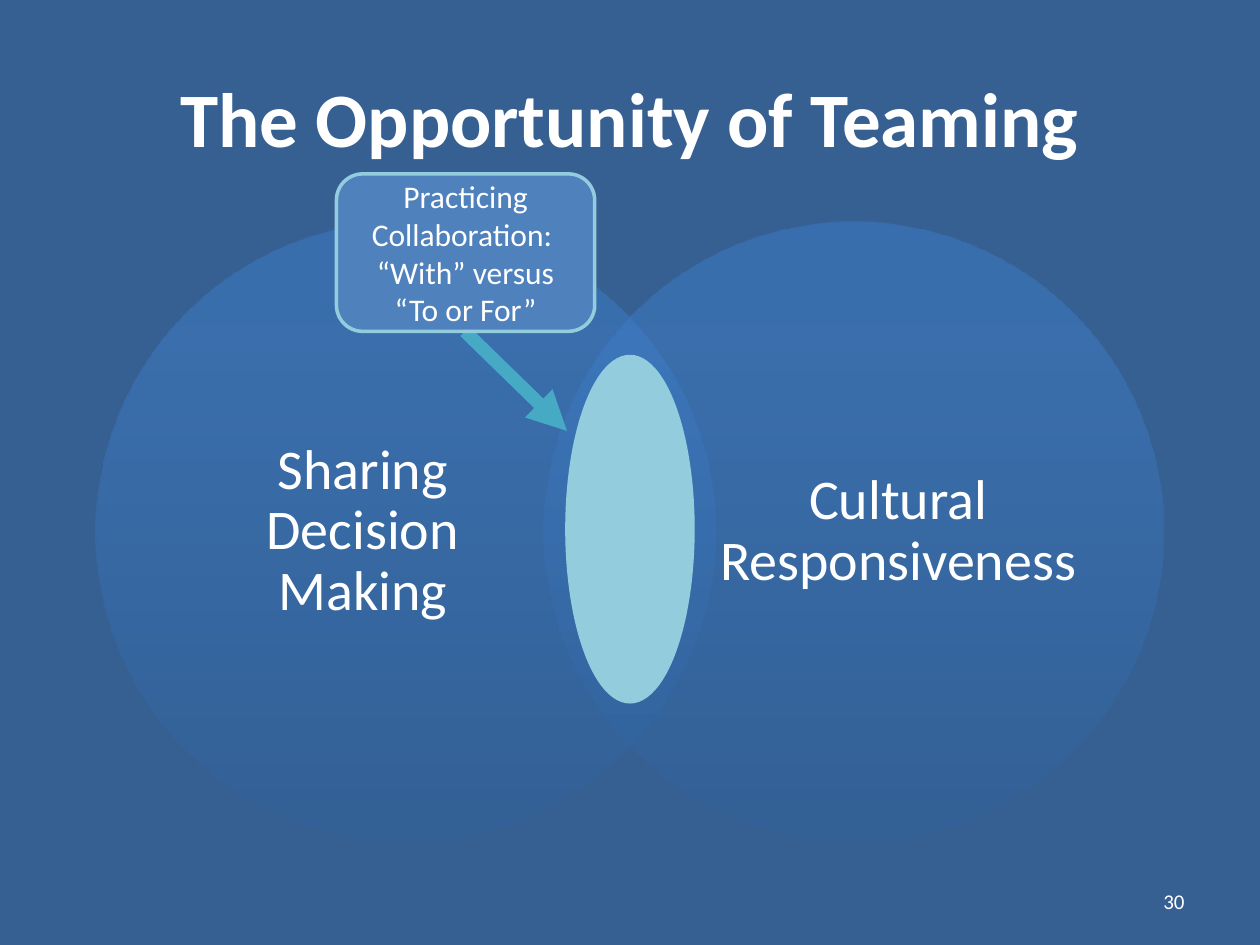
from lxml.etree import SubElement
from pptx import Presentation
from pptx.dml.color import RGBColor
from pptx.enum.shapes import MSO_CONNECTOR as CONNECTOR, MSO_SHAPE as SHAPE
from pptx.enum.text import MSO_ANCHOR as ANCHOR, PP_ALIGN as ALIGN
from pptx.oxml.ns import qn
from pptx.util import Inches, Pt

NAVY = RGBColor(0x37, 0x60, 0x92)
BLUE = RGBColor(0x4F, 0x81, 0xBD)
AQUA = RGBColor(0x93, 0xCD, 0xDD)
TEAL = RGBColor(0x46, 0xAA, 0xC5)
WHITE = RGBColor(0xFF, 0xFF, 0xFF)
CIRCLE_STOPS = (
    (0, RGBColor(0x2F, 0x5F, 0x99)),
    (80, RGBColor(0x3D, 0x7C, 0xC7)),
    (100, RGBColor(0x3A, 0x7C, 0xCB)),
)


class VennSlide:
    """Draws the parts of a Venn diagram slide in one shared style."""

    font = "Calibri"

    def __init__(self, deck):
        self.slide = deck.slides.add_slide(deck.slide_layouts[6])
        self.slide.background.fill.solid()
        self.slide.background.fill.fore_color.rgb = NAVY

    def letter(self, frame, wording, size, align=ALIGN.CENTER, bold=False):
        frame.word_wrap = True
        frame.vertical_anchor = ANCHOR.MIDDLE
        frame.text = wording
        for paragraph in frame.paragraphs:
            paragraph.alignment = align
            for run in paragraph.runs:
                run.font.name = self.font
                run.font.size = Pt(size)
                run.font.bold = bold
                run.font.color.rgb = WHITE

    def text(self, box, wording, size, **style):
        frame = self.slide.shapes.add_textbox(*map(Inches, box)).text_frame
        self.letter(frame, wording, size, **style)
        return frame

    def outline(self, kind, box):
        shape = self.slide.shapes.add_shape(kind, *map(Inches, box))
        shape.shadow.inherit = False
        return shape

    def solid(self, kind, box, fill):
        shape = self.outline(kind, box)
        shape.fill.solid()
        shape.fill.fore_color.rgb = fill
        shape.line.color.rgb = AQUA
        shape.line.width = Pt(2)
        return shape

    def circle(self, left, top, diameter):
        circle = self.outline(SHAPE.OVAL, (left, top, diameter, diameter))
        circle.line.fill.background()
        circle.fill.gradient()
        circle.fill.gradient_angle = 90
        stops = circle.element.spPr.find(".//" + qn("a:gsLst"))
        for stop in list(stops):
            stops.remove(stop)
        for percent, color in CIRCLE_STOPS:
            stop = SubElement(stops, qn("a:gs"), pos=str(percent * 1000))
            tint = SubElement(stop, qn("a:srgbClr"), val=str(color))
            SubElement(tint, qn("a:alpha"), val="50000")

    def circle_label(self, box, wording):
        frame = self.text(box, wording, 32)
        frame.margin_left = frame.margin_right = 0
        frame.margin_top = frame.margin_bottom = 0
        frame.paragraphs[0].line_spacing = 0.9

    def arrow(self, start, end):
        arrow = self.slide.shapes.add_connector(
            CONNECTOR.STRAIGHT, *map(Inches, start + end))
        arrow.line.color.rgb = TEAL
        arrow.line.width = Pt(7.5)
        properties = arrow.element.spPr
        SubElement(properties.find(qn("a:ln")), qn("a:tailEnd"), type="triangle")
        SubElement(properties, qn("a:effectLst"))


def main():
    deck = Presentation()
    deck.slide_width, deck.slide_height = Inches(10), Inches(7.5)
    venn = VennSlide(deck)
    venn.text((0.5, 0.3, 9, 1.25), "The Opportunity of Teaming", 44, bold=True)
    topics = (
        (0.76, 1.45, "Sharing Decision Making"),
        (4.31, 5.7, "Cultural Responsiveness"),
    )
    for circle_left, label_left, topic in topics:
        venn.circle(circle_left, 1.76, 4.92)
        venn.circle_label((label_left, 2.34, 2.86, 3.76), topic)
    venn.arrow((3.69, 2.63), (4.5, 3.42))
    callout = venn.solid(SHAPE.ROUNDED_RECTANGLE, (2.67, 1.38, 2.05, 1.25), BLUE)
    venn.letter(callout.text_frame,
                "Practicing Collaboration: \n“With” versus\n“To or For”", 18)
    venn.solid(SHAPE.OVAL, (4.5, 2.83, 1, 2.74), AQUA)
    venn.text((7.17, 6.95, 2.33, 0.4), "30", 12, align=ALIGN.RIGHT)
    deck.save("out.pptx")


if __name__ == "__main__":
    main()
